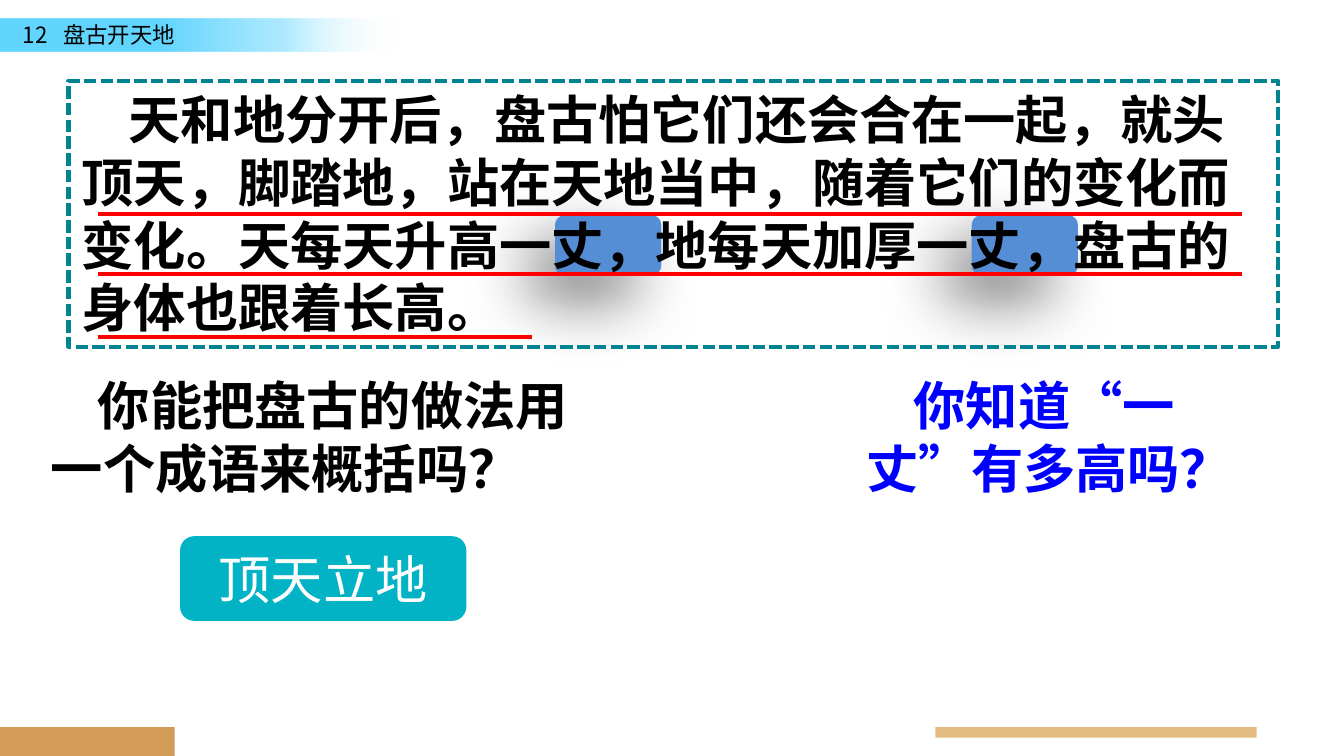
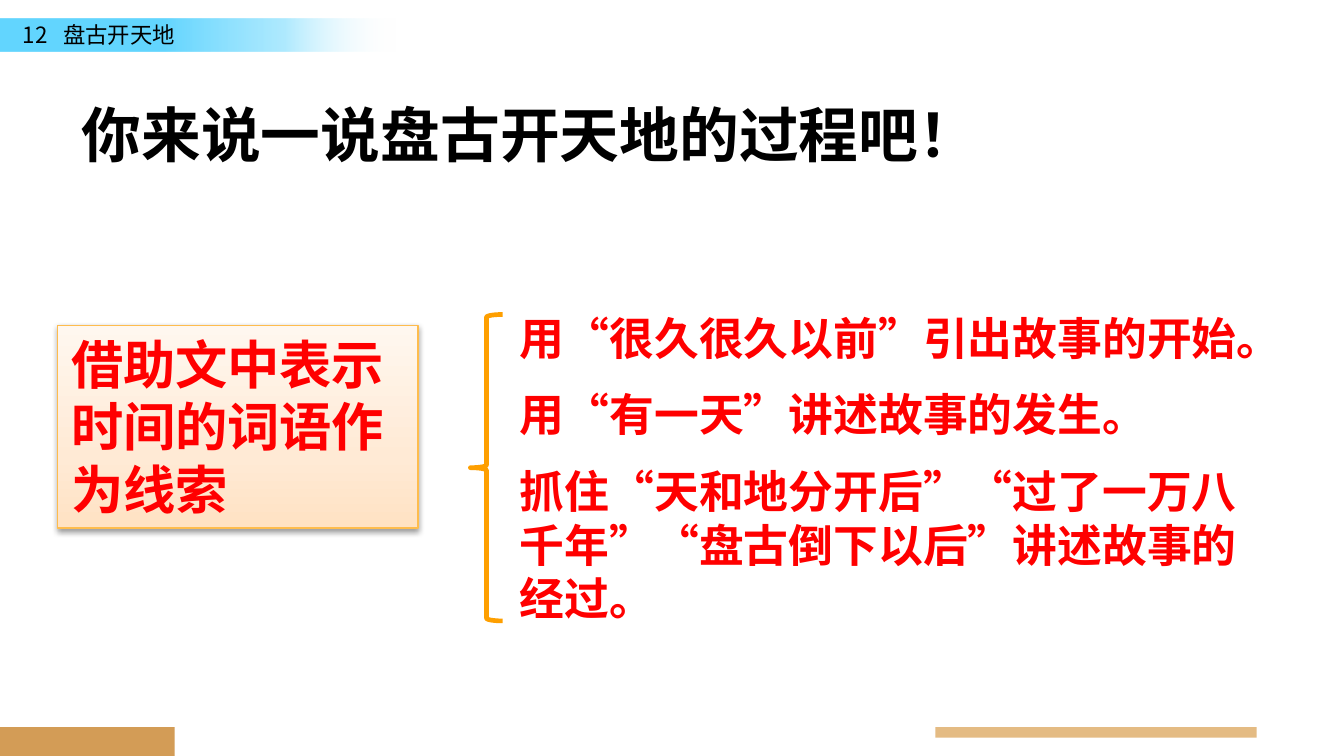
from lxml.etree import SubElement
from pptx import Presentation
from pptx.dml.color import RGBColor
from pptx.enum.dml import MSO_LINE
from pptx.enum.shapes import MSO_CONNECTOR, MSO_SHAPE
from pptx.enum.text import MSO_ANCHOR, MSO_AUTO_SIZE, PP_ALIGN
from pptx.oxml.ns import qn
from pptx.util import Inches, Pt

FONT = "Noto Sans CJK SC"
WIDTH = 10
HEIGHT = WIDTH * 9 / 16
CELL = WIDTH / 100
INDENT = 3.5

COLORS = {
    "black": "000000", "white": "FFFFFF", "red": "FF0000", "blue": "0000FF",
    "sky": "63D6FF", "pale sky": "97E4FF", "ochre": "D39C56", "sand": "E4BB83",
    "highlight": "558ED5", "frame": "018492", "answer": "02B3C5",
    "peach": "FFE2C3", "light peach": "FFEAD5", "cream": "FFF7EF",
    "clue edge": "FEBC4D", "brace": "FE9F00",
}

LESSON = "12\t盘古开天地"
LESSON_AREA = (0, 1.4, 30.3, 2.4)
LESSON_FADE = [(40, "sky", 100), (70, "pale sky", 76), (97, "white", 0)]
FOOTER_BARS = [("ochre", (0, 54.1, 13, 2.15)), ("sand", (69.6, 54.1, 23.9, 0.8))]

PASSAGE = ("天和地分开后，盘古怕它们还会合在一起，就头顶天，脚踏地，站在天地当中，"
           "随着它们的变化而变化。天每天升高一丈，地每天加厚一丈，盘古的身体也跟着长高。")
PASSAGE_AREA = (5.1, 6, 90, 19.8)
HIGHLIGHT_LEFTS = (41.3, 72.3)
HIGHLIGHT_SHADOW = ("black", 50, 35, 20, 135)
UNDERLINE_LEFT = 7.3
UNDERLINES = [(15.9, 92.4), (20.4, 92.4), (25.1, 39.6)]
QUESTIONS = [
    ("你能把盘古的做法用一个成语来概括吗？", "black", (2.8, 27.3, 42.5, 10.4)),
    ("你知道“一丈”有多高吗？", "blue", (63.5, 27.3, 36.2, 10.4)),
]
IDIOM = "顶天立地"
IDIOM_AREA = (13.4, 39.9, 21.3, 6.3)

PROMPT = "你来说一说盘古开天地的过程吧！"
PROMPT_AREA = (5.1, 4.1, 89.8, 9.1)
CLUE = "借助文中表示时间的词语作为线索"
CLUE_AREA = (4.3, 24.2, 26.8, 15.1)
CLUE_FADE = [(0, "peach", 100), (35, "light peach", 100), (100, "cream", 100)]
CLUE_SHADOW = ("black", 38, 3.1, 1.6, 90)
STEPS = [
    ("用“很久很久以前”引出故事的开始。", 55.9, 5),
    ("用“有一天”讲述故事的发生。", 48.5, 5),
    ("抓住“天和地分开后”“过了一万八千年”“盘古倒下以后”讲述故事的经过。", 55.9, 13.1),
]
STEP_LEFT, STEP_TOP, STEP_PITCH = 37.7, 22.6, 5.7
BRACE_AREA = (35, 23.4, 2.4, 22.8)


def grid(*cells):
    return [Inches(cell * CELL) for cell in cells]


def rgb(color):
    return RGBColor.from_string(COLORS[color])


def add_color(parent, color, opacity):
    entry = SubElement(parent, qn("a:srgbClr"), val=COLORS[color])
    if opacity < 100:
        SubElement(entry, qn("a:alpha"), val=str(opacity * 1000))


def fade(shape, stops, angle):
    shape.fill.gradient()
    gradient = shape._element.spPr.find(qn("a:gradFill"))
    stop_list = gradient.find(qn("a:gsLst"))
    for stop in list(stop_list):
        stop_list.remove(stop)
    for position, color, opacity in stops:
        stop = SubElement(stop_list, qn("a:gs"), pos=str(position * 1000))
        add_color(stop, color, opacity)
    gradient.find(qn("a:lin")).set("ang", str(angle * 60000))


def cast_shadow(shape, color, opacity, blur, distance, direction):
    effects = shape._element.spPr.find(qn("a:effectLst"))
    shadow = SubElement(effects, qn("a:outerShdw"), blurRad=str(Pt(blur)), dist=str(Pt(distance)),
                        dir=str(direction * 60000), algn="t", rotWithShape="0")
    add_color(shadow, color, opacity)


def add_figure(slide, kind, area, fill=None, line=None, weight=1):
    figure = slide.shapes.add_shape(kind, *grid(*area))
    if fill:
        figure.fill.solid()
        figure.fill.fore_color.rgb = rgb(fill)
    else:
        figure.fill.background()
    if line:
        figure.line.color.rgb = rgb(line)
        figure.line.width = Pt(weight)
    else:
        figure.line.fill.background()
    figure.shadow.inherit = False
    return figure


def write(shape, text, color, size=28, bold=True, indent=0, align=PP_ALIGN.LEFT,
          anchor=MSO_ANCHOR.TOP, grow=True, tab=None):
    frame = shape.text_frame
    frame.word_wrap = True
    frame.auto_size = MSO_AUTO_SIZE.SHAPE_TO_FIT_TEXT if grow else MSO_AUTO_SIZE.NONE
    frame.vertical_anchor = anchor
    paragraph = frame.paragraphs[0]
    paragraph.alignment = align
    properties = paragraph._p.get_or_add_pPr()
    if indent:
        properties.set("indent", str(Inches(indent * CELL)))
    if tab:
        tabs = SubElement(properties, qn("a:tabLst"))
        SubElement(tabs, qn("a:tab"), pos=str(Inches(tab * CELL)), algn="l")
    run = paragraph.add_run()
    run.text = text
    run.font.size = Pt(size)
    run.font.bold = bold
    run.font.name = FONT
    run.font.color.rgb = rgb(color)
    run_properties = run._r.get_or_add_rPr()
    run_properties.set("lang", "zh-CN")
    SubElement(run_properties, qn("a:ea"), typeface=FONT)
    return paragraph


def add_text(slide, area, text, color, **style):
    return write(slide.shapes.add_textbox(*grid(*area)), text, color, **style)


def add_underline(slide, top, right):
    line = slide.shapes.add_connector(MSO_CONNECTOR.STRAIGHT,
                                      *grid(UNDERLINE_LEFT, top, right, top))
    line.line.color.rgb = rgb("red")
    line.line.width = Pt(2)
    SubElement(line._element.spPr, qn("a:effectLst"))


def add_lesson_slide(deck):
    slide = deck.slides.add_slide(deck.slide_layouts[6])
    band = add_figure(slide, MSO_SHAPE.RECTANGLE, LESSON_AREA)
    fade(band, LESSON_FADE, 180)
    band._element.spPr.find(qn("a:xfrm")).set("flipH", "1")
    band.text_frame.margin_left = Inches(1.7 * CELL)
    write(band, LESSON, "black", size=12, bold=False, anchor=MSO_ANCHOR.MIDDLE, grow=False, tab=3)
    for color, area in FOOTER_BARS:
        add_figure(slide, MSO_SHAPE.RECTANGLE, area, color)
    return slide


def build_passage(deck):
    slide = add_lesson_slide(deck)
    for left in HIGHLIGHT_LEFTS:
        mark = add_figure(slide, MSO_SHAPE.ROUNDED_RECTANGLE, (left, 16, 7.9, 4.5), "highlight")
        cast_shadow(mark, *HIGHLIGHT_SHADOW)
    passage = add_figure(slide, MSO_SHAPE.RECTANGLE, PASSAGE_AREA, line="frame", weight=2.25)
    passage.line.dash_style = MSO_LINE.SQUARE_DOT
    write(passage, PASSAGE, "black", indent=INDENT)
    for question, color, area in QUESTIONS:
        add_text(slide, area, question, color, indent=INDENT)
    idiom = add_figure(slide, MSO_SHAPE.ROUNDED_RECTANGLE, IDIOM_AREA, "answer")
    write(idiom, IDIOM, "white", bold=False, align=PP_ALIGN.CENTER,
          anchor=MSO_ANCHOR.MIDDLE, grow=False)
    for top, right in UNDERLINES:
        add_underline(slide, top, right)


def build_retelling(deck):
    slide = add_lesson_slide(deck)
    add_text(slide, PROMPT_AREA, PROMPT, "black", size=32).line_spacing = 1.5
    clue = add_figure(slide, MSO_SHAPE.RECTANGLE, CLUE_AREA, line="clue edge", weight=0.75)
    fade(clue, CLUE_FADE, 270)
    cast_shadow(clue, *CLUE_SHADOW)
    write(clue, CLUE, "red")
    for index, (step, width, height) in enumerate(STEPS):
        area = (STEP_LEFT, STEP_TOP + index * STEP_PITCH, width, height)
        add_text(slide, area, step, "red", size=24)
    add_figure(slide, MSO_SHAPE.LEFT_BRACE, BRACE_AREA, line="brace", weight=2.5)


def main():
    """Build the two lesson slides on the Pangu story."""
    deck = Presentation()
    deck.slide_width, deck.slide_height = Inches(WIDTH), Inches(HEIGHT)
    build_passage(deck)
    build_retelling(deck)
    deck.save("out.pptx")


if __name__ == "__main__":
    main()
